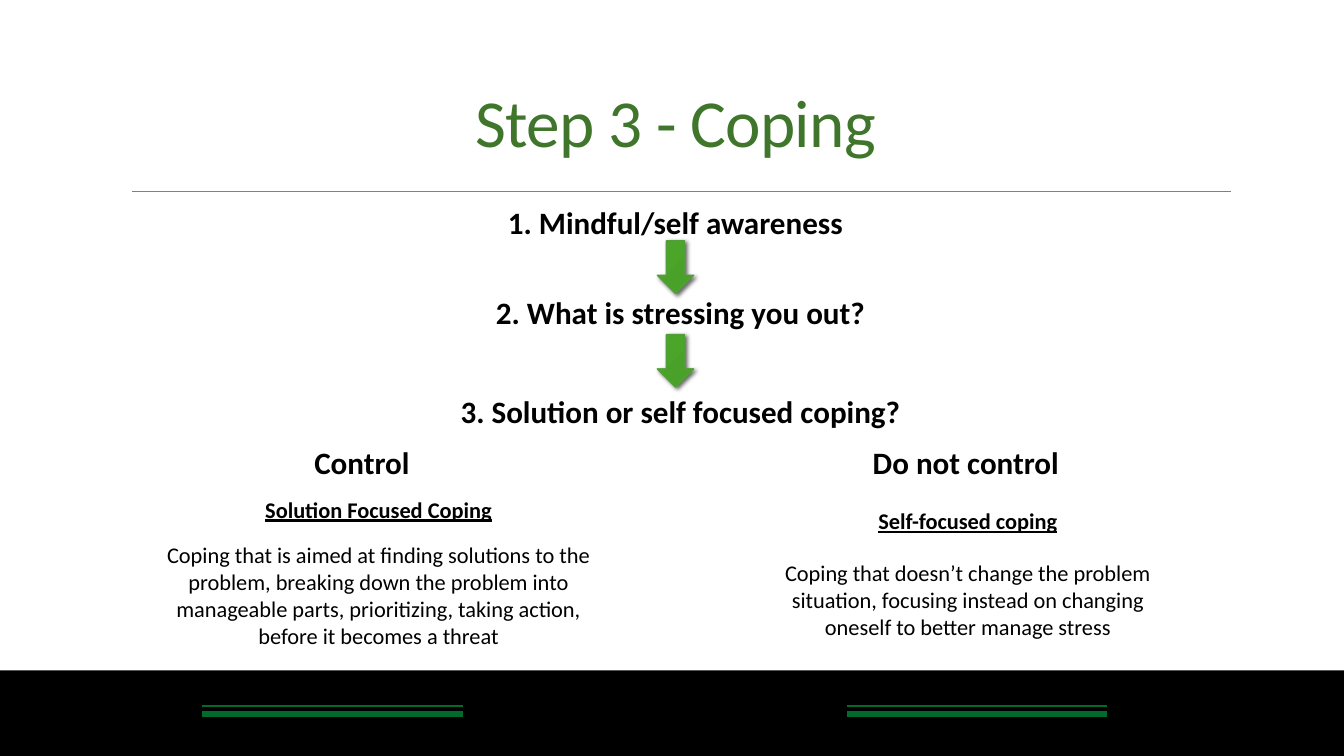
from lxml.etree import SubElement
from pptx import Presentation
from pptx.dml.color import RGBColor
from pptx.enum.shapes import MSO_CONNECTOR, MSO_SHAPE
from pptx.enum.text import MSO_ANCHOR, PP_ALIGN
from pptx.oxml import parse_xml
from pptx.oxml.ns import nsdecls, qn
from pptx.util import Inches, Pt

COLORS = {
    "title": "3F762B", "text": "000000", "footer": "000000", "rule": "808080",
    "stripe": "006B2D", "arrow_line": "549E39", "shadow": "000000",
}
ARROW_STOPS = [(0, "48A127"), (34, "4AA12A"), (70, "4AA528"), (100, "52A334")]

prs = Presentation()
prs.slide_width, prs.slide_height = Inches(13.33), Inches(7.5)
slide = prs.slides.add_slide(prs.slide_layouts[6])


def add_text(left, top, width, height, paragraphs, anchor=MSO_ANCHOR.MIDDLE):
    """Centred text; each paragraph is (text, size, bold, underline, color, space before)."""
    frame = slide.shapes.add_textbox(
        Inches(left), Inches(top), Inches(width), Inches(height)).text_frame
    frame.word_wrap = True
    frame.vertical_anchor = anchor
    for i, (text, size, bold, underline, color, before) in enumerate(paragraphs):
        paragraph = frame.paragraphs[0] if i == 0 else frame.add_paragraph()
        paragraph.text = text
        paragraph.alignment = PP_ALIGN.CENTER
        paragraph.space_before = Pt(before)
        font = paragraph.font
        font.name, font.size = "Calibri", Pt(size)
        font.bold, font.underline = bold, underline
        font.color.rgb = RGBColor.from_string(COLORS[color])
    return frame


def add_line(left, right, y, color, weight):
    line = slide.shapes.add_connector(
        MSO_CONNECTOR.STRAIGHT, Inches(left), Inches(y), Inches(right), Inches(y))
    line.line.color.rgb = RGBColor.from_string(COLORS[color])
    line.line.width = Pt(weight)
    SubElement(line._element.spPr, qn("a:effectLst"))


# Footer band, its stripes and the rule below the title
footer = slide.shapes.add_shape(
    MSO_SHAPE.RECTANGLE, 0, Inches(6.65), prs.slide_width, Inches(0.85))
footer.shadow.inherit = False
footer.fill.solid()
footer.fill.fore_color.rgb = RGBColor.from_string(COLORS["footer"])
footer.line.fill.background()
add_line(1.31, 12.21, 1.9, "rule", 0.5)
for left, right in [(2, 4.59), (8.4, 10.98)]:
    add_line(left, right, 7.08, "stripe", 4.5)
    add_line(left, right, 7, "stripe", 1.5)

# Title
title = add_text(1.2, 0.7, 11, 1, [("Step 3 - Coping", 48, False, False, "title", 0)])
title.paragraphs[0].runs[0].font._element.set("spc", "-50")

# Steps and the two branches, placed by their centres
for label, center_x, center_y, width in [
    ("1. Mindful/self awareness", 6.7, 2.2, 6),
    ("2. What is stressing you out?", 6.75, 3.1, 6),
    ("3. Solution or self focused coping?", 6.75, 4.08, 6),
    ("Control", 3.59, 4.58, 3),
    ("Do not control", 9.58, 4.58, 3),
]:
    add_text(center_x - width / 2, center_y - 0.25, width, 0.5,
             [(label, 22.2, True, False, "text", 0)])

# Arrows between the steps
stops = "".join(f'<a:gs pos="{pos * 1000}"><a:srgbClr val="{color}"/></a:gs>'
                for pos, color in ARROW_STOPS)
for top in (2.39, 3.32):
    arrow = slide.shapes.add_shape(
        MSO_SHAPE.DOWN_ARROW, Inches(6.52), Inches(top), Inches(0.36), Inches(0.52))
    arrow.line.color.rgb = RGBColor.from_string(COLORS["arrow_line"])
    arrow.line.width = Pt(1)
    properties = arrow._element.spPr
    properties.find(qn("a:prstGeom")).addnext(parse_xml(
        f'<a:gradFill {nsdecls("a")}><a:gsLst>{stops}</a:gsLst><a:path path="circle">'
        '<a:fillToRect l="100000" t="100000"/></a:path></a:gradFill>'))
    properties.append(parse_xml(
        f'<a:effectLst {nsdecls("a")}><a:outerShdw blurRad="{Pt(3)}" dist="{Pt(2)}" '
        f'dir="2700000"><a:srgbClr val="{COLORS["shadow"]}"><a:alpha val="60000"/>'
        '</a:srgbClr></a:outerShdw></a:effectLst>'))

# Explanation of each kind of coping
for left, top, width, height, gap, heading, explanation in [
    (1.53, 4.87, 4.45, 1.7, 13.4, "Solution Focused Coping",
     "Coping that is aimed at finding solutions to the problem, breaking down the problem "
     "into manageable parts, prioritizing, taking action, before it becomes a threat"),
    (7.53, 4.98, 4.14, 1.5, 18, "Self-focused coping",
     "Coping that doesn’t change the problem situation, focusing instead on changing "
     "oneself to better manage stress"),
]:
    add_text(left, top, width, height,
             [(heading, 16, True, True, "text", 0),
              (explanation, 16, False, False, "text", gap)], MSO_ANCHOR.TOP)

prs.save("out.pptx")
